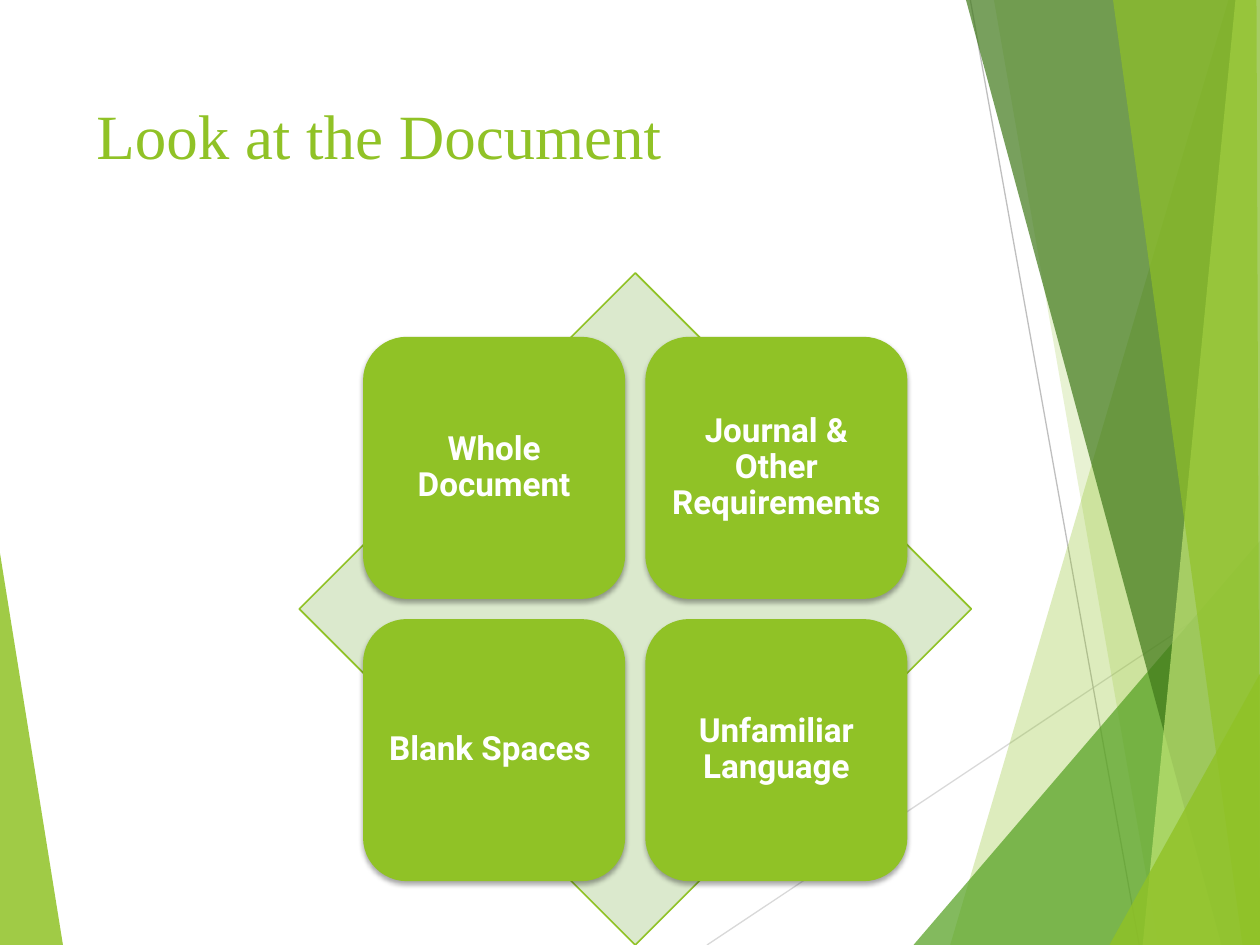
from lxml import etree
from pptx import Presentation
from pptx import util as u
from pptx.dml import color
from pptx.enum import shapes, text
from pptx.oxml import ns

Pt = u.Pt
WIDE, HIGH = 720, 540
HUES = {
    "lime": "90C226", "green": "54A021", "dark": "3F7819", "pale": "C0E474",
    "mint": "DBE9CD", "light": "D9D9D9", "grey": "BFBFBF",
    "white": "FFFFFF", "black": "000000",
}
# Hue, opacity in percent, corners in points
LEFT = ("lime", 85, [(0, 316), (35.5, HIGH), (0, HIGH)])
RIGHT = [
    ("lime", 30, [(702, 0), (543, HIGH), (WIDE, HIGH), (WIDE, 0)]),
    ("lime", 20, [(567.5, 0), (661.5, HIGH), (WIDE, HIGH), (WIDE, 0)]),
    ("green", 72, [(522.5, HIGH), (WIDE, 309), (WIDE, HIGH)]),
    ("dark", 70, [(552, 0), (698.5, HIGH), (WIDE, HIGH), (WIDE, 0)]),
    ("pale", 70, [(706.5, 0), (653, HIGH), (WIDE, HIGH), (WIDE, 0)]),
    ("lime", 65, [(636, 0), (710, HIGH), (WIDE, HIGH), (718.5, 0)]),
    ("lime", 80, [(634.5, HIGH), (WIDE, 385), (WIDE, HIGH)]),
]
RAYS = [("light", (404, HIGH), (WIDE, 329.5)), ("grey", (554.5, 0), (651, HIGH))]
TILES = ["Whole Document", "Journal & Other Requirements",
         "Blank Spaces ", "Unfamiliar Language"]


def rgb(hue):
    return color.RGBColor.from_string(HUES[hue])


def style(item, **vals):
    for name, val in vals.items():
        setattr(item, name, val)


def node(base, tag, **vals):
    """Add a DrawingML child with the given attributes."""
    return etree.SubElement(base, ns.qn(tag), {k: str(v) for k, v in vals.items()})


def paint(shape, hue, edge=None):
    shape.shadow.inherit = False
    shape.fill.solid()
    shape.fill.fore_color.rgb = rgb(hue)
    if edge:
        shape.line.color.rgb = rgb(edge)
        shape.line.width = Pt(1)
    else:
        shape.line.fill.background()


def shard(slide, hue, alpha, spots):
    """Draw one translucent polygon."""
    form = slide.shapes.build_freeform(*spots[0], scale=Pt(1))
    form.add_line_segments(spots[1:], close=True)
    shape = form.convert_to_shape()
    paint(shape, hue)
    tint = shape.fill._xPr.find(ns.qn("a:solidFill"))[0]
    node(tint, "a:alpha", val=alpha * 1000)


def ray(slide, hue, start, end):
    """Draw one thin straight line."""
    line = slide.shapes.add_connector(
        shapes.MSO_CONNECTOR.STRAIGHT, *(Pt(v) for v in start + end))
    style(line.line, width=Pt(0.75))
    line.line.color.rgb = rgb(hue)
    node(line._element.spPr, "a:effectLst")


def decor(slide):
    shard(slide, *LEFT)
    for args in RAYS:
        ray(slide, *args)
    for args in RIGHT:
        shard(slide, *args)


def write(frame, words, font, para, **vals):
    """Put one formatted paragraph in a text frame."""
    style(frame, word_wrap=True, **vals)
    line = frame.paragraphs[0]
    style(line, **para)
    run = line.add_run()
    run.text = words
    hue = font.pop("hue")
    style(run.font, **font)
    run.font.color.rgb = rgb(hue)


def title(slide, left, top, width, height):
    box = slide.shapes.add_textbox(*map(Pt, (left, top, width, height)))
    write(box.text_frame, "Look at the Document",
          dict(name="Times New Roman", size=Pt(36), hue="lime"),
          dict(alignment=text.PP_ALIGN.LEFT),
          vertical_anchor=text.MSO_ANCHOR.TOP, margin_top=Pt(7))


def tile(slide, words, left, top, side):
    shape = slide.shapes.add_shape(
        shapes.MSO_SHAPE.ROUNDED_RECTANGLE, *map(Pt, (left, top, side, side)))
    paint(shape, "lime")
    glow = node(shape._element.spPr.find(ns.qn("a:effectLst")), "a:outerShdw",
                blurRad=Pt(3), dist=Pt(2), dir=5400000, rotWithShape=0)
    shade = node(glow, "a:srgbClr", val=HUES["black"])
    node(shade, "a:alpha", val=35000)
    pads = {f"margin_{edge}": Pt(5.7) for edge in ("left", "top", "right", "bottom")}
    write(shape.text_frame, words,
          dict(name="Roboto", size=Pt(19), bold=True, hue="white"),
          dict(alignment=text.PP_ALIGN.CENTER, line_spacing=0.9),
          vertical_anchor=text.MSO_ANCHOR.MIDDLE, **pads)


def matrix(slide, left, top, size):
    """Draw a diamond with a two by two grid of tiles over it."""
    back = slide.shapes.add_shape(
        shapes.MSO_SHAPE.DIAMOND, *map(Pt, (left, top, size, size)))
    paint(back, "mint", "lime")
    inset, side, step = 0.095 * size, 0.39 * size, 0.42 * size
    for spot, words in enumerate(TILES):
        row, col = divmod(spot, 2)
        tile(slide, words, left + inset + col * step, top + inset + row * step, side)


def main():
    deck = Presentation()
    style(deck, slide_width=Pt(WIDE), slide_height=Pt(HIGH))
    slide = deck.slides.add_slide(deck.slide_layouts[6])
    decor(slide)
    title(slide, 48, 48, 500, 104)
    matrix(slide, 171, 156, 384)
    deck.save("out.pptx")


if __name__ == "__main__":
    main()
